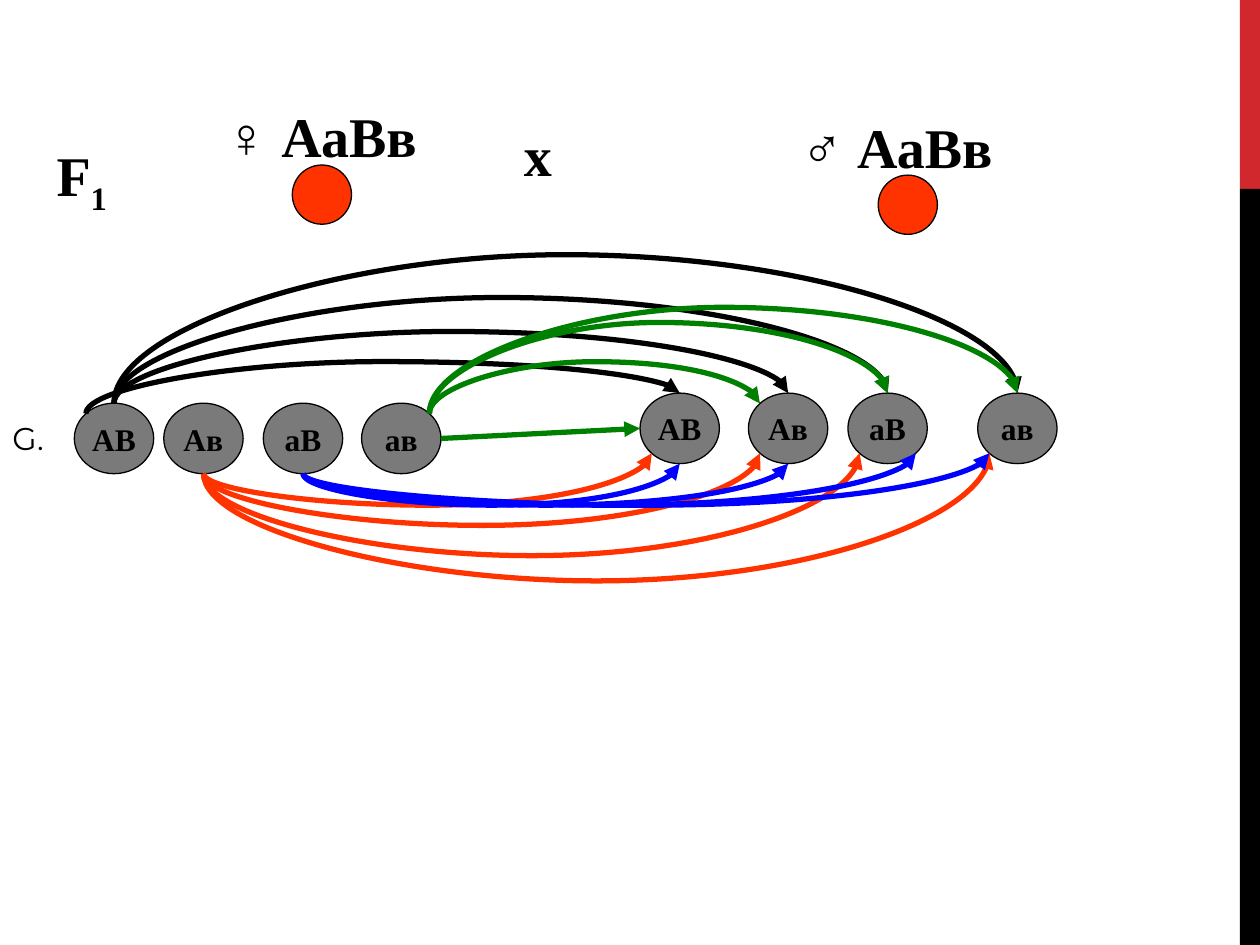
import math

import pptx
import pptx.dml.color
import pptx.enum.shapes
import pptx.enum.text
import pptx.oxml
import pptx.oxml.ns
import pptx.util
from lxml import etree

SLIDE_WIDTH, SLIDE_HEIGHT = 10, 7.5
THEME = {
    "serif": "Times New Roman", "sans": "Montserrat",
    "title_size": 32, "label_size": 18,
    "thin": 0.75, "arrow": 3,
    "black": "000000", "red": "FF3300", "blue": "0000FF", "green": "008000",
    "gamete": "7A7A7A", "accent": "D1282E",
}

BAND_WIDTH = 0.16
BANDS = [("accent", 0, 0.2), ("black", 0.2, 0.8)]  # shares of the slide height

# left, top, width, height, runs of (text, format values)
CAPTIONS = [
    (0.35, 1.07, 0.62, 0.63, [("F", {"bold": True}), ("1", {"bold": True, "baseline": -25})]),
    (1.69, 0.76, 1.73, 0.63, [("♀ ", {}), ("АаВв", {"bold": True})]),
    (4.06, 0.91, 0.42, 0.63, [("х", {"bold": True})]),
    (6.26, 0.84, 1.73, 0.63, [("♂", {}), (" АаВв", {"bold": True})]),
]
GAMETE_CAPTION = (0, 3.28, 0.59, 0.5, [("G.", {})])

PARENT_SIZE = 0.47
PARENTS = [(2.32, 1.31), (6.97, 1.39)]

GAMETE_WIDTH, GAMETE_HEIGHT = 0.63, 0.56
GENOTYPES = ["АВ", "Ав", "аВ", "ав"]
GAMETE_ROWS = {"egg": (3.2, [0.59, 1.3, 2.09, 2.87]),
               "sperm": (3.12, [5.08, 5.94, 6.73, 7.76])}

# egg, colour, arrows to the sperm in order: (start side, end side, height of the bend)
CROSSES = [
    ("АВ", "black", [("top left", "top", 2.87), ("top", "top", 2.63),
                     ("top", "top", 2.36), ("top", "top", 2.02)]),
    ("Ав", "red", [("bottom", "bottom left", 4.01), ("bottom", "bottom left", 4.17),
                   ("bottom", "bottom left", 4.41), ("bottom", "bottom left", 4.61)]),
    ("аВ", "blue", [("bottom", "bottom", 4.01), ("bottom", "bottom", 4.01),
                    ("bottom", "bottom right", 4.01), ("bottom", "bottom left", 4.01)]),
    ("ав", "green", [("right", "left", None), ("top right", "top left", 2.87),
                     ("top right", "top", 2.56), ("top right", "top", 2.44)]),
]

SHAPES = pptx.enum.shapes.MSO_SHAPE
CONNECTORS = pptx.enum.shapes.MSO_CONNECTOR
inches = pptx.util.Inches
qn = pptx.oxml.ns.qn


def color(name):
    return pptx.dml.color.RGBColor.from_string(THEME[name])


def add_runs(paragraph, runs, font="serif", size="title_size"):
    for text, values in runs:
        run = paragraph.add_run()
        run.text = text
        run.font.color.rgb = color("black")
        formats = {"name": THEME[font], "size": pptx.util.Pt(THEME[size]),
                   "bold": values.get("bold", False)}
        for key, value in formats.items():
            setattr(run.font, key, value)
        if "baseline" in values:
            run.font._element.set("baseline", str(values["baseline"] * 1000))


def add_caption(slide, caption, wrap=False, **style):
    *box, runs = caption
    frame = slide.shapes.add_textbox(*map(inches, box)).text_frame
    frame.word_wrap = wrap
    frame.auto_size = pptx.enum.text.MSO_AUTO_SIZE.SHAPE_TO_FIT_TEXT
    add_runs(frame.paragraphs[0], runs, **style)


def add_filled(slide, kind, box, fill, outlined=True):
    shape = slide.shapes.add_shape(kind, *map(inches, box))
    shape.shadow.inherit = False
    shape.fill.solid()
    shape.fill.fore_color.rgb = color(fill)
    if outlined:
        shape.line.color.rgb = color("black")
        shape.line.width = pptx.util.Pt(THEME["thin"])
    else:
        shape.line.fill.background()
    return shape


def add_gamete(slide, left, top, genotype):
    box = (left, top, GAMETE_WIDTH, GAMETE_HEIGHT)
    frame = add_filled(slide, SHAPES.OVAL, box, "gamete").text_frame
    frame.word_wrap = False
    frame.vertical_anchor = pptx.enum.text.MSO_ANCHOR.MIDDLE
    paragraph = frame.paragraphs[0]
    paragraph.alignment = pptx.enum.text.PP_ALIGN.CENTER
    add_runs(paragraph, [(genotype, {"bold": True})], size="label_size")


def rim_point(row, index, side):
    """Point on a gamete's rim; a corner side lies on the diagonal."""
    top, lefts = GAMETE_ROWS[row]
    across = ("right" in side) - ("left" in side)
    down = ("bottom" in side) - ("top" in side)
    reach = math.hypot(across, down)
    return (lefts[index] + GAMETE_WIDTH / 2 * (1 + across / reach),
            top + GAMETE_HEIGHT / 2 * (1 + down / reach))


def add_arrow(slide, start, end, bend, line_color):
    """Straight arrow, or a curve that leaves and arrives vertically by way of bend."""
    (x1, y1), (x2, y2) = start, end
    kind = CONNECTORS.STRAIGHT
    if bend is not None:
        # A curve with vertical ends is a horizontal one given a quarter turn.
        kind = CONNECTORS.CURVE
        width, height = y1 - y2, x2 - x1
        middle_x, middle_y = (x1 + x2) / 2, (y1 + y2) / 2
        x1, y1 = middle_x - width / 2, middle_y - height / 2
        x2, y2 = x1 + width, y1 + height
    connector = slide.shapes.add_connector(kind, *map(inches, (x1, y1, x2, y2)))
    connector.line.color.rgb = color(line_color)
    connector.line.width = pptx.util.Pt(THEME["arrow"])
    properties = connector._element.spPr
    if bend is not None:
        above = bend < start[1]
        turn = {"rot": 270} if above else {"rot": 90, "flipH": 1, "flipV": 1}
        turn["rot"] *= 60000
        for key, value in turn.items():
            properties.find(qn("a:xfrm")).set(key, str(value))
        guides = properties.find(qn("a:prstGeom")).get_or_add_avLst()
        share = round((start[1] - bend) / width * 100000)
        etree.SubElement(guides, qn("a:gd"), name="adj1", fmla=f"val {share}")
    etree.SubElement(properties.find(qn("a:ln")), qn("a:tailEnd"), type="triangle")
    etree.SubElement(properties, qn("a:effectLst"))


def main():
    presentation = pptx.Presentation()
    presentation.slide_width = inches(SLIDE_WIDTH)
    presentation.slide_height = inches(SLIDE_HEIGHT)
    slide = presentation.slides.add_slide(presentation.slide_layouts[6])

    for fill, top, share in BANDS:
        box = (SLIDE_WIDTH - BAND_WIDTH, top * SLIDE_HEIGHT, BAND_WIDTH, share * SLIDE_HEIGHT)
        add_filled(slide, SHAPES.RECTANGLE, box, fill, outlined=False)
    for caption in CAPTIONS:
        add_caption(slide, caption)
    add_caption(slide, GAMETE_CAPTION, wrap=True, font="sans", size="label_size")
    for left, top in PARENTS:
        add_filled(slide, SHAPES.OVAL, (left, top, PARENT_SIZE, PARENT_SIZE), "red")
    for top, lefts in GAMETE_ROWS.values():
        for left, genotype in zip(lefts, GENOTYPES):
            add_gamete(slide, left, top, genotype)
    for egg, line_color, arrows in CROSSES:
        for sperm, (start_side, end_side, bend) in enumerate(arrows):
            start = rim_point("egg", GENOTYPES.index(egg), start_side)
            end = rim_point("sperm", sperm, end_side)
            add_arrow(slide, start, end, bend, line_color)

    presentation.save("out.pptx")


if __name__ == "__main__":
    main()
